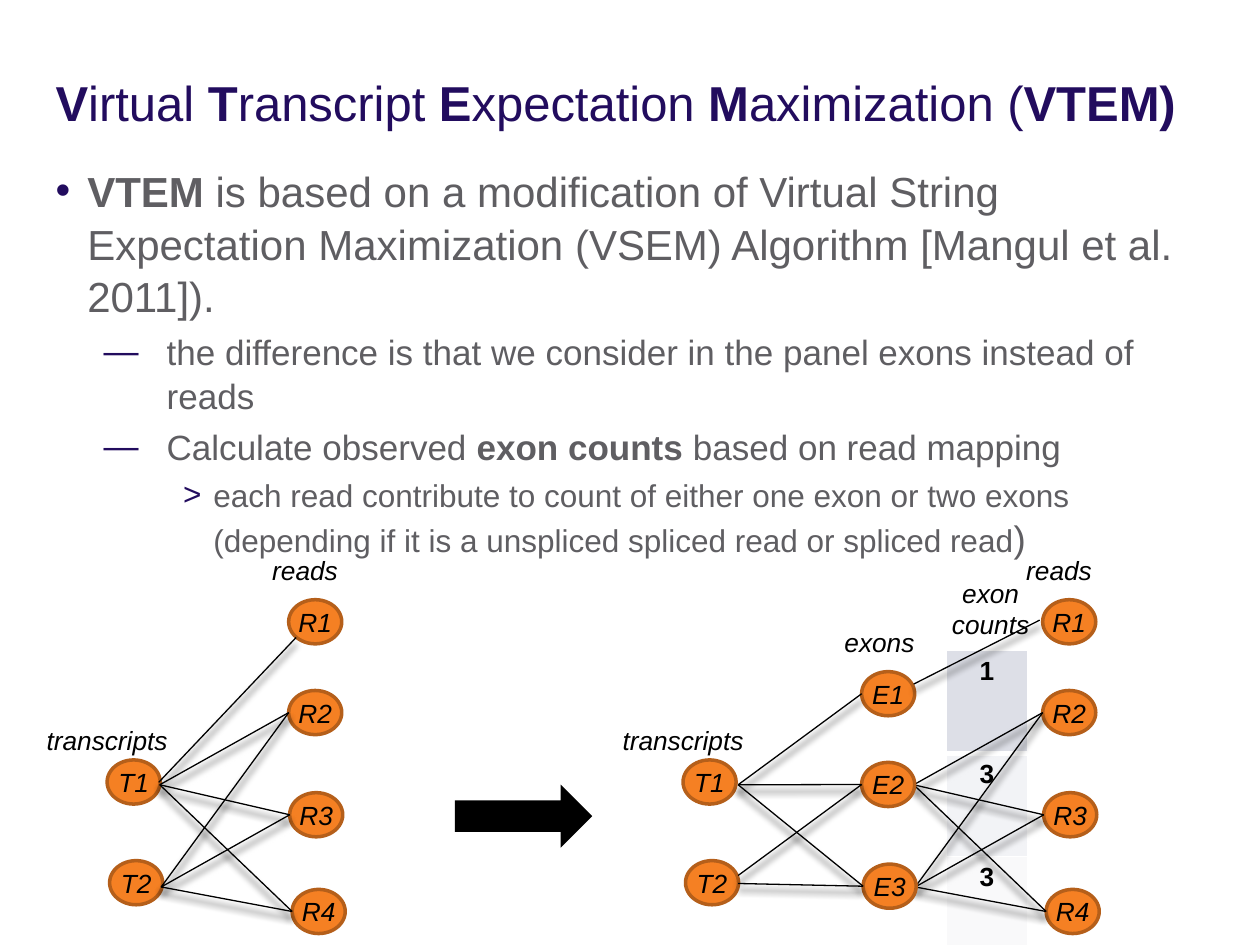
from dataclasses import dataclass

from lxml.etree import SubElement
from pptx import Presentation
from pptx.dml.color import RGBColor
from pptx.enum.shapes import MSO_CONNECTOR, MSO_SHAPE
from pptx.enum.text import MSO_ANCHOR, MSO_AUTO_SIZE, PP_ALIGN
from pptx.oxml.ns import qn
from pptx.util import Cm, Pt


@dataclass(frozen=True)
class Theme:
    """Colours, font and type sizes of the slide."""
    font: str = "Arial"
    navy: str = "220C5E"
    grey: str = "5F5E62"
    black: str = "000000"
    white: str = "FFFFFF"
    node: str = "F58023"
    rim: str = "B55F1A"
    bands: tuple = ("DDDFE7", "F2F3F6", "F9F9FA")
    title: float = 28
    levels: tuple = (24, 20, 18)
    label: float = 15
    paren: float = 21


LEVELS = (("•", 0.64, 0.64), ("—", 2.24, 1.27), (">", 3.18, 0.61))
HEAD = "*V*irtual *T*ranscript *E*xpectation* M*aximization (*VTEM)*"
BODY = (
    (0, "*VTEM* is based on a modification of Virtual String Expectation "
        "Maximization (VSEM) Algorithm [Mangul et al. 2011])."),
    (1, "the difference is that we consider in the panel exons instead of reads"),
    (1, "Calculate observed *exon counts* based on read mapping"),
    (2, "each read contribute to count of either one exon or two exons "
        "(depending if it is a unspliced spliced read or spliced read**)"),
)
WIDE, HIGH = 1.07, 0.89
READS = {"R1": (5.82, 12.09), "R2": (5.82, 13.92), "R3": (5.84, 15.98), "R4": (5.89, 17.93)}
SCRIPTS = {"T1": (2.16, 15.32), "T2": (2.21, 17.35)}
EXONS = {"E1": (17.37, 13.54), "E2": (17.37, 15.37), "E3": (17.4, 17.42)}
HUBS = ((3.22, 15.82), (3.25, 17.88))
READ_GAP, SCRIPT_GAP = 15.2, 11.61


class Deck:
    """Holds the style and the current slide."""

    def __init__(self, theme):
        """Open a blank title and content slide."""
        self.theme = theme
        self.prs = Presentation()
        self.prs.slide_width, self.prs.slide_height = Cm(25.4), Cm(19.05)
        self.slide = self.prs.slides.add_slide(self.prs.slide_layouts[1])
        self.shapes = self.slide.shapes

    def style(self, run, size, color, bold=False, slant=False):
        """Format one run."""
        font = run.font
        font.name, font.size = self.theme.font, Pt(size)
        font.bold, font.italic = bold, slant
        font.color.rgb = RGBColor.from_string(color)

    def rich(self, para, text, size, color):
        """Fill a paragraph, with bold text between stars."""
        for num, part in enumerate(text.split("*")):
            if part:
                run = para.add_run()
                run.text = part
                self.style(run, size, color, num % 2 == 1)

    def place(self, shape, box, pads):
        """Move a placeholder and set its insets."""
        shape.left, shape.top, shape.width, shape.height = map(Cm, box)
        frame = shape.text_frame
        frame.auto_size, frame.word_wrap = MSO_AUTO_SIZE.NONE, True
        frame.vertical_anchor = MSO_ANCHOR.TOP
        (frame.margin_left, frame.margin_top,
         frame.margin_right, frame.margin_bottom) = map(Cm, pads)
        return frame

    def title(self, text):
        """Write the title."""
        frame = self.place(self.shapes.title, (1.12, 1.35, 23.19, 1.73), (0, 0.12, 0, 0))
        para = frame.paragraphs[0]
        para.alignment = PP_ALIGN.LEFT
        self.rich(para, text, self.theme.title, self.theme.navy)

    def bullet(self, para, mark, left, hang):
        """Give a paragraph a hanging bullet."""
        props = para._p.get_or_add_pPr()
        props.set("marL", str(Cm(left)))
        props.set("indent", str(-Cm(hang)))
        tint = SubElement(props, qn("a:buClr"))
        SubElement(tint, qn("a:srgbClr"), val=self.theme.navy)
        SubElement(props, qn("a:buFont"), typeface=self.theme.font)
        SubElement(props, qn("a:buChar"), char=mark)

    def body(self, items):
        """Write the bullet list."""
        frame = self.place(self.slide.placeholders[1], (1.12, 3.28, 23.19, 14.43), (0, 0, 0.51, 0))
        for num, (level, text) in enumerate(items):
            para = frame.add_paragraph() if num else frame.paragraphs[0]
            size = self.theme.levels[level]
            para.level = level
            self.bullet(para, *LEVELS[level])
            para.alignment, para.line_spacing = PP_ALIGN.LEFT, 1.05
            para.space_before = Pt(size * 0.2 if num else 0)
            self.rich(para, text, size, self.theme.grey)
        para.runs[-1].font.size = Pt(self.theme.paren)

    def label(self, text, left, top, width=3.1, height=0.89):
        """Add a centred italic caption."""
        box = self.shapes.add_textbox(Cm(left), Cm(top), Cm(width), Cm(height))
        frame = box.text_frame
        frame.word_wrap, frame.text = True, text
        self.caption(frame.paragraphs[0])

    def caption(self, para):
        """Format a label paragraph."""
        para.alignment = PP_ALIGN.CENTER
        self.style(para.runs[0], self.theme.label, self.theme.black, slant=True)

    def shape(self, kind, box, fill):
        """Add a flat filled shape without a line."""
        item = self.shapes.add_shape(kind, *map(Cm, box))
        item.shadow.inherit = False
        item.fill.solid()
        item.fill.fore_color.rgb = RGBColor.from_string(fill)
        item.line.fill.background()
        return item

    def nodes(self, group, shift=0):
        """Add the named ovals of one column."""
        for name, (left, top) in group.items():
            oval = self.shape(MSO_SHAPE.OVAL, (left + shift, top, WIDE, HIGH), self.theme.node)
            oval.line.color.rgb = RGBColor.from_string(self.theme.rim)
            oval.line.width = Pt(2)
            frame = oval.text_frame
            frame.margin_left = frame.margin_top = frame.margin_right = frame.margin_bottom = 0
            frame.word_wrap, frame.vertical_anchor = False, MSO_ANCHOR.MIDDLE
            frame.text = name
            self.caption(frame.paragraphs[0])

    def edge(self, start, end):
        """Add a thin line with a soft shadow."""
        line = self.shapes.add_connector(MSO_CONNECTOR.STRAIGHT, *map(Cm, (*start, *end)))
        line.line.color.rgb = RGBColor.from_string(self.theme.black)
        line.line.width = Pt(0.75)
        glow = SubElement(line._element.spPr, qn("a:effectLst"))
        shade = SubElement(glow, qn("a:outerShdw"), blurRad=str(Pt(4)), dist=str(Pt(4)),
                           dir="5400000", algn="t", rotWithShape="0")
        SubElement(shade, qn("a:srgbClr"), val=self.theme.black)

    def fan(self, shift=0):
        """Join both hubs to the lower three reads."""
        for left, top in HUBS:
            for name in ("R2", "R3", "R4"):
                self.edge((left + shift, top), port(READS[name], shift))

    def table(self, values):
        """Add the one-column table of counts."""
        size = len(values)
        grid = self.shapes.add_table(size, 1, Cm(19.08), Cm(13.11), Cm(1.63), Cm(2.08 * size)).table
        grid.first_row = grid.horz_banding = False
        for row, value in enumerate(values):
            cell = grid.cell(row, 0)
            cell.text = value
            para = cell.text_frame.paragraphs[0]
            para.alignment = PP_ALIGN.CENTER
            self.style(para.runs[0], self.theme.label, self.theme.black, True)
            wide = {"T": 3 if row == 1 else 1, "B": 3 if row == 0 else 1}
            for side in "LRTB":
                rule = SubElement(cell._tc.get_or_add_tcPr(), qn(f"a:ln{side}"),
                                  w=str(Pt(wide.get(side, 1))))
                SubElement(SubElement(rule, qn("a:solidFill")), qn("a:srgbClr"), val=self.theme.white)
            cell.fill.solid()
            cell.fill.fore_color.rgb = RGBColor.from_string(self.theme.bands[row])


def port(spot, shift=0):
    """Return the left middle of a node."""
    return spot[0] + shift, spot[1] + HIGH / 2


def main():
    """Build and save the slide."""
    deck = Deck(Theme())
    deck.title(HEAD)
    deck.body(BODY)
    deck.table(("1", "3", "3"))
    deck.label("exon counts", 18.42, 11.51, height=1.55)
    for read, script in ((0, 0), (READ_GAP, SCRIPT_GAP)):
        deck.label("reads", 4.6 + read, 11.05)
        deck.label("transcripts", 0.46 + script, 14.48, 3.4)
        deck.nodes(READS, read)
        deck.nodes(SCRIPTS, script)
        deck.fan(read)
    deck.label("exons", 16.18, 12.5)
    deck.nodes(EXONS)
    deck.edge((3.2, 15.77), (5.97, 12.85))
    deck.edge((18.42, 13.79), (20.96, 12.5))
    for top, name in ((15.82, "E1"), (15.82, "E2"), (15.82, "E3"), (17.65, "E2"), (17.81, "E3")):
        deck.edge((14.88, top), port(EXONS[name]))
    deck.shape(MSO_SHAPE.RIGHT_ARROW, (9.17, 15.82, 2.77, 1.27), deck.theme.black)
    deck.prs.save("out.pptx")


if __name__ == "__main__":
    main()
